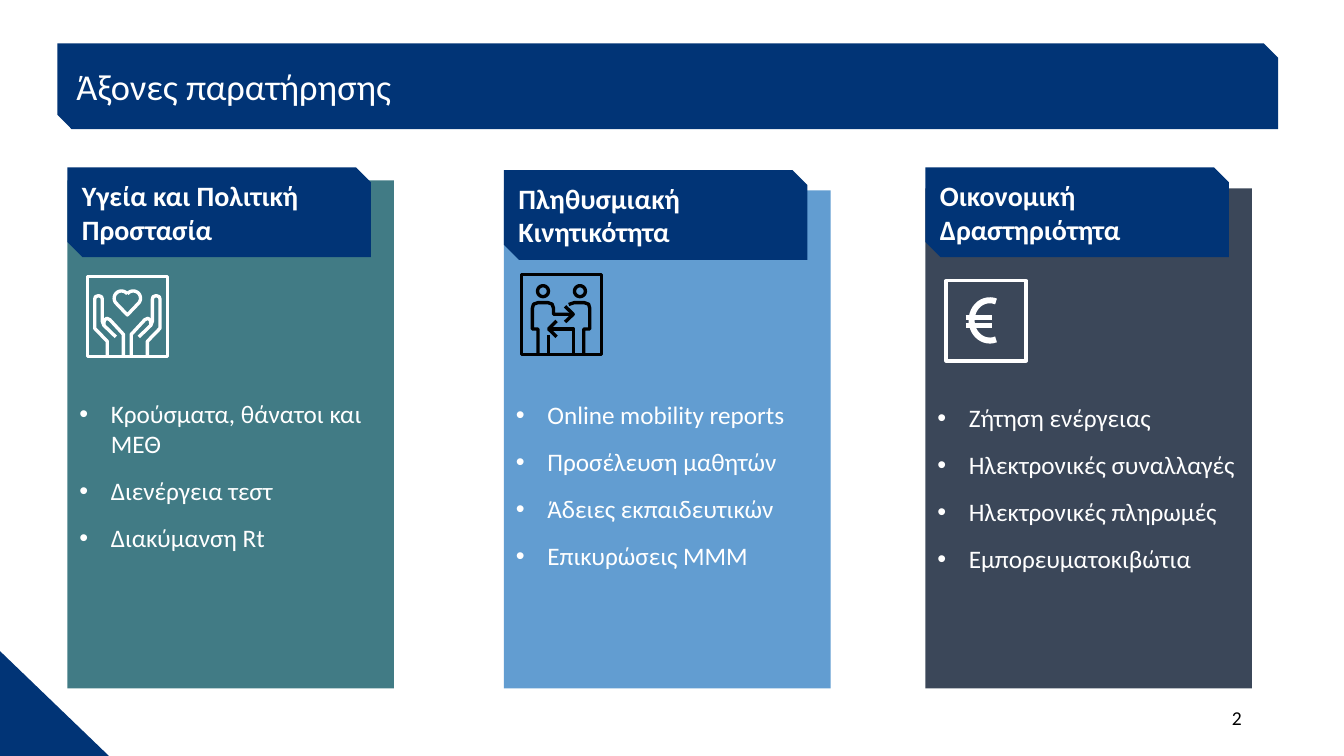
import math
from dataclasses import dataclass

from lxml import etree
from pptx import Presentation
from pptx import util as u
from pptx.dml.color import RGBColor
from pptx.enum import shapes, text
from pptx.oxml.ns import qn

COLORS = {
    "navy": "013476",
    "teal": "417B85",
    "blue": "629DD1",
    "slate": "3B4759",
    "white": "FFFFFF",
    "black": "000000",
}
FONT = "Calibri"
PANEL_WIDTH, PANEL_BOTTOM = 233.3, 491.8
HEADING_WIDTH, HEADING_HEIGHT = 216.7, 64.1
ICON_SIZE, ICON_PEN = 59.6, 2.4

Point = tuple[float, float]
Stroke = list[Point]


@dataclass(frozen=True)
class Icon:
    left: float
    top: float
    color: str
    strokes: dict[float, list[Stroke]]  # pen width -> strokes inside the frame


@dataclass(frozen=True)
class Column:
    left: float
    panel_top: float
    heading_top: float
    text_top: float
    fill: str
    heading: str
    bullets: list[str]
    icon: Icon


def arc(cx: float, cy: float, rx: float, ry: float, start: int, end: int) -> Stroke:
    """Points on an ellipse, in degrees clockwise from the right."""
    steps = 24
    angles = [math.radians(start + (end - start) * i / steps) for i in range(steps + 1)]
    return [(cx + rx * math.cos(a), cy + ry * math.sin(a)) for a in angles]


def mirror(stroke: Stroke) -> Stroke:
    return [(ICON_SIZE - x, y) for x, y in stroke]


def care_strokes() -> dict[float, list[Stroke]]:
    palm = [(15.5, 57.6), (15.5, 47.5), (6.5, 38.2), (6.5, 17.3), (7, 15.6), (9.2, 14.8),
            (11.4, 15.6), (11.9, 17.3), (11.9, 33.1), (13, 36), (21.6, 44.3)]
    thumb = [(27, 57.6), (27, 42.5), (17.3, 32), (15.1, 31), (13.3, 32.4), (13, 36)]
    lobe = arc(25.6, 16.7, 5.2, 5.2, -37, -220)
    heart = lobe + [(ICON_SIZE / 2, 28.6)] + mirror(lobe)[::-1]
    return {ICON_PEN: [palm, mirror(palm), thumb, mirror(thumb), heart]}


def meeting_strokes() -> dict[float, list[Stroke]]:
    head = arc(16.6, 13, 3.9, 3.9, 0, 360)
    left_person = [(13, 57.6), (13, 40), (9, 40), (9, 25.2), (9.8, 22.3), (13, 21.2),
                   (20.2, 21.2), (23.2, 22.3), (24.1, 25.2), (24.1, 29.5), (38.2, 29.5)]
    right_person = [(35, 22.5), (38.9, 21.2), (46.1, 21.2), (49.2, 22.3), (50, 25.2),
                    (50, 40), (45.7, 40), (45.7, 57.6)]
    left_leg = [(20.5, 44.6), (20.5, 57.6)]
    right_arm = [(38.5, 57.6), (38.5, 40), (20.6, 40)]
    arrowhead_right = [(32.4, 23.8), (38.2, 29.5), (32.4, 35)]
    arrowhead_left = [(26.3, 34.2), (20.6, 40), (26.3, 45.6)]
    return {ICON_PEN: [head, mirror(head), left_person, right_person, left_leg,
                       right_arm, arrowhead_right, arrowhead_left]}


def euro_strokes() -> dict[float, list[Stroke]]:
    bars = [[(15.1, y), (33.8, y)] for y in (27.4, 33.1)]
    return {4.3: [arc(32.4, 29.5, 13, 14.4, 290, 70)], 2.9: bars}


COLUMNS = [
    Column(48.2, 128.9, 119.5, 284.5, "teal", "Υγεία και Πολιτική Προστασία",
           ["Κρούσματα, θάνατοι και ΜΕΘ", "Διενέργεια τεστ", "Διακύμανση Rt"],
           Icon(61.2, 196.4, "white", care_strokes())),
    Column(360, 136.1, 121.5, 285.3, "blue", "Πληθυσμιακή Κινητικότητα",
           ["Online mobility reports", "Προσέλευση μαθητών", "Άδειες εκπαιδευτικών",
            "Επικυρώσεις ΜΜΜ"],
           Icon(371.3, 195, "black", meeting_strokes())),
    Column(661, 134.6, 119.5, 287.3, "slate", "Οικονομική Δραστηριότητα",
           ["Ζήτηση ενέργειας", "Ηλεκτρονικές συναλλαγές", "Ηλεκτρονικές πληρωμές",
            "Εμπορευματοκιβώτια"],
           Icon(674.6, 199.4, "white", euro_strokes())),
]


def rgb(color: str) -> RGBColor:
    return RGBColor.from_string(COLORS[color])


def add_filled(slide, kind, left: float, top: float, width: float, height: float, color: str):
    shape = slide.shapes.add_shape(kind, *map(u.Pt, (left, top, width, height)))
    shape.shadow.inherit = False
    shape.fill.solid()
    shape.fill.fore_color.rgb = rgb(color)
    shape.line.fill.background()
    return shape


def add_bullet(paragraph, color: str) -> None:
    properties = paragraph._p.get_or_add_pPr()
    properties.set("marL", str(u.Pt(22.5)))
    properties.set("indent", str(u.Pt(-22.5)))
    bullet_color = etree.SubElement(properties, qn("a:buClr"))
    etree.SubElement(bullet_color, qn("a:srgbClr"), val=COLORS[color])
    etree.SubElement(properties, qn("a:buFont"), typeface="Arial")
    etree.SubElement(properties, qn("a:buChar"), char="•")


def write(shape, lines: list[str], *, size: float, color: str = "white", bold: bool = False,
          align=text.PP_ALIGN.LEFT, anchor=text.MSO_ANCHOR.MIDDLE,
          insets: tuple[float, float, float, float] = (7.2, 3.6, 7.2, 3.6),
          bullets: bool = False, gap: float = 0) -> None:
    """Fill a shape with paragraphs; insets run left, top, right, bottom."""
    frame = shape.text_frame
    frame.word_wrap = True
    frame.vertical_anchor = anchor
    (frame.margin_left, frame.margin_top,
     frame.margin_right, frame.margin_bottom) = map(u.Pt, insets)
    for index, line in enumerate(lines):
        paragraph = frame.add_paragraph() if index else frame.paragraphs[0]
        paragraph.alignment = align
        paragraph.space_before = u.Pt(gap if index else 0)
        paragraph.space_after = u.Pt(gap)
        if bullets:
            add_bullet(paragraph, color)
        run = paragraph.add_run()
        run.text = line
        run.font.name, run.font.size, run.font.bold = FONT, u.Pt(size), bold
        run.font.color.rgb = rgb(color)


def add_strokes(slide, icon: Icon, pen: float, strokes: list[Stroke]) -> None:
    """Draw strokes of one pen width as a single unfilled outline."""
    placed = [[(u.Pt(icon.left + x), u.Pt(icon.top + y)) for x, y in stroke]
              for stroke in strokes]
    builder = slide.shapes.build_freeform(*placed[0][0])
    for index, (start, *rest) in enumerate(placed):
        if index:
            builder.move_to(*start)
        builder.add_line_segments(rest, close=False)
    shape = builder.convert_to_shape()
    shape.shadow.inherit = False
    shape.fill.background()
    shape.line.color.rgb = rgb(icon.color)
    shape.line.width = u.Pt(pen)


def add_icon(slide, icon: Icon) -> None:
    near, far = ICON_PEN / 2, ICON_SIZE - ICON_PEN / 2
    frame = slide.shapes.add_shape(shapes.MSO_SHAPE.RECTANGLE, u.Pt(icon.left + near),
                                   u.Pt(icon.top + near), u.Pt(far - near), u.Pt(far - near))
    frame.shadow.inherit = False
    frame.fill.background()
    frame.line.color.rgb = rgb(icon.color)
    frame.line.width = u.Pt(ICON_PEN)
    for pen, strokes in icon.strokes.items():
        add_strokes(slide, icon, pen, strokes)


def add_column(slide, column: Column) -> None:
    panel = add_filled(slide, shapes.MSO_SHAPE.RECTANGLE, column.left, column.panel_top,
                       PANEL_WIDTH, PANEL_BOTTOM - column.panel_top, column.fill)
    write(panel, column.bullets, size=18, anchor=text.MSO_ANCHOR.TOP, bullets=True, gap=6,
          insets=(8.5, column.text_top - column.panel_top, 5.7, 2.8))
    heading = add_filled(slide, shapes.MSO_SHAPE.SNIP_2_DIAG_RECTANGLE, column.left,
                         column.heading_top, HEADING_WIDTH, HEADING_HEIGHT, "navy")
    write(heading, [column.heading], size=20, bold=True, insets=(5, 2.2, 5, 2.2))
    add_icon(slide, column.icon)


def main() -> None:
    presentation = Presentation()
    presentation.slide_width, presentation.slide_height = u.Pt(960), u.Pt(540)
    slide = presentation.slides.add_slide(presentation.slide_layouts[6])

    add_filled(slide, shapes.MSO_SHAPE.RIGHT_TRIANGLE, 0, 465.1, 77.8, 74.9, "navy")
    title = add_filled(slide, shapes.MSO_SHAPE.SNIP_2_DIAG_RECTANGLE,
                       41, 31, 872, 61.2, "navy")
    write(title, ["Άξονες παρατήρησης"], size=26, insets=(8.6, 1.4, 8.6, 1.4))
    for column in COLUMNS:
        add_column(slide, column)
    page_number = slide.shapes.add_textbox(*map(u.Pt, (678.2, 500.4, 216, 28.8)))
    write(page_number, ["2"], size=14, color="black", align=text.PP_ALIGN.RIGHT,
          anchor=text.MSO_ANCHOR.TOP)

    presentation.save("out.pptx")


if __name__ == "__main__":
    main()
